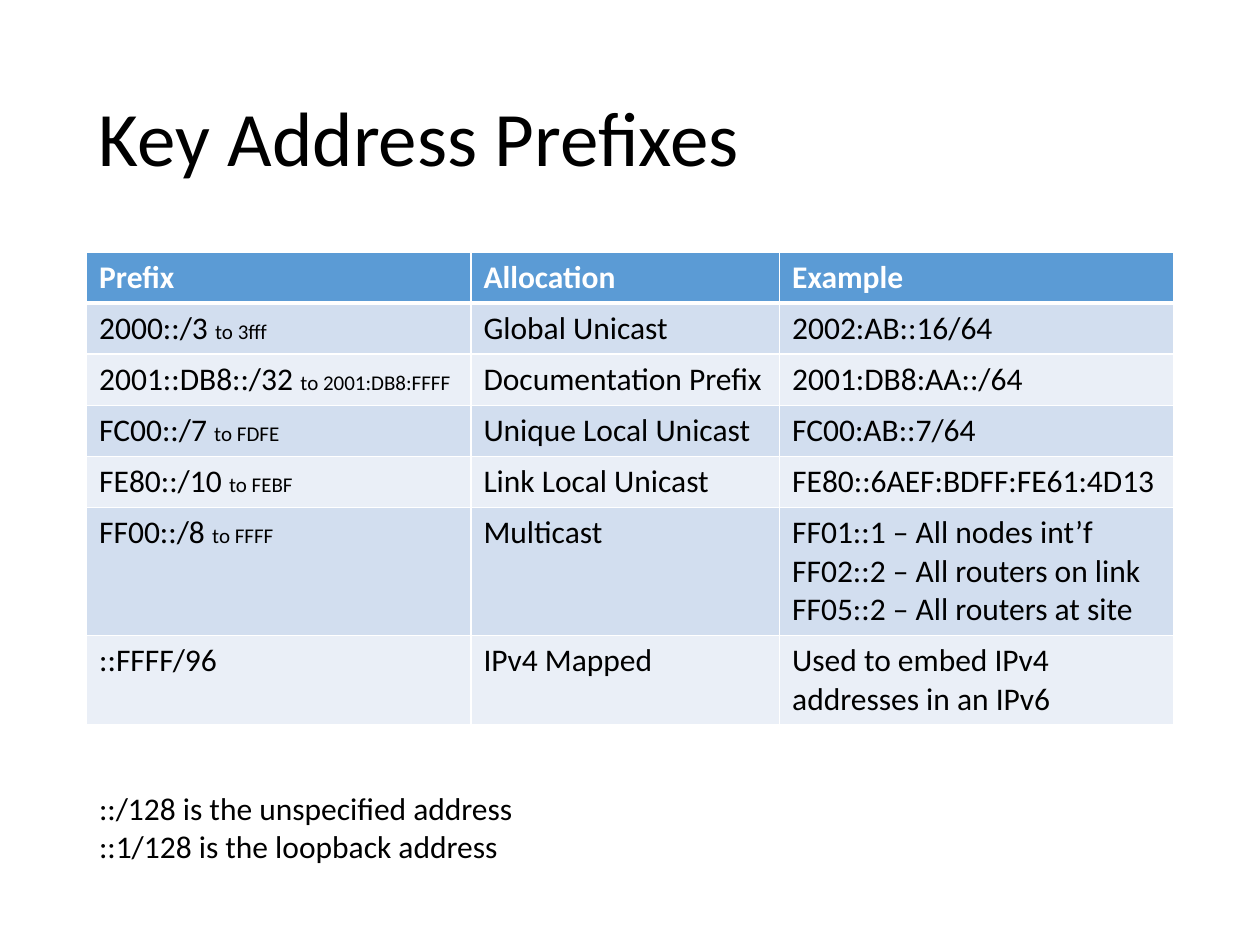
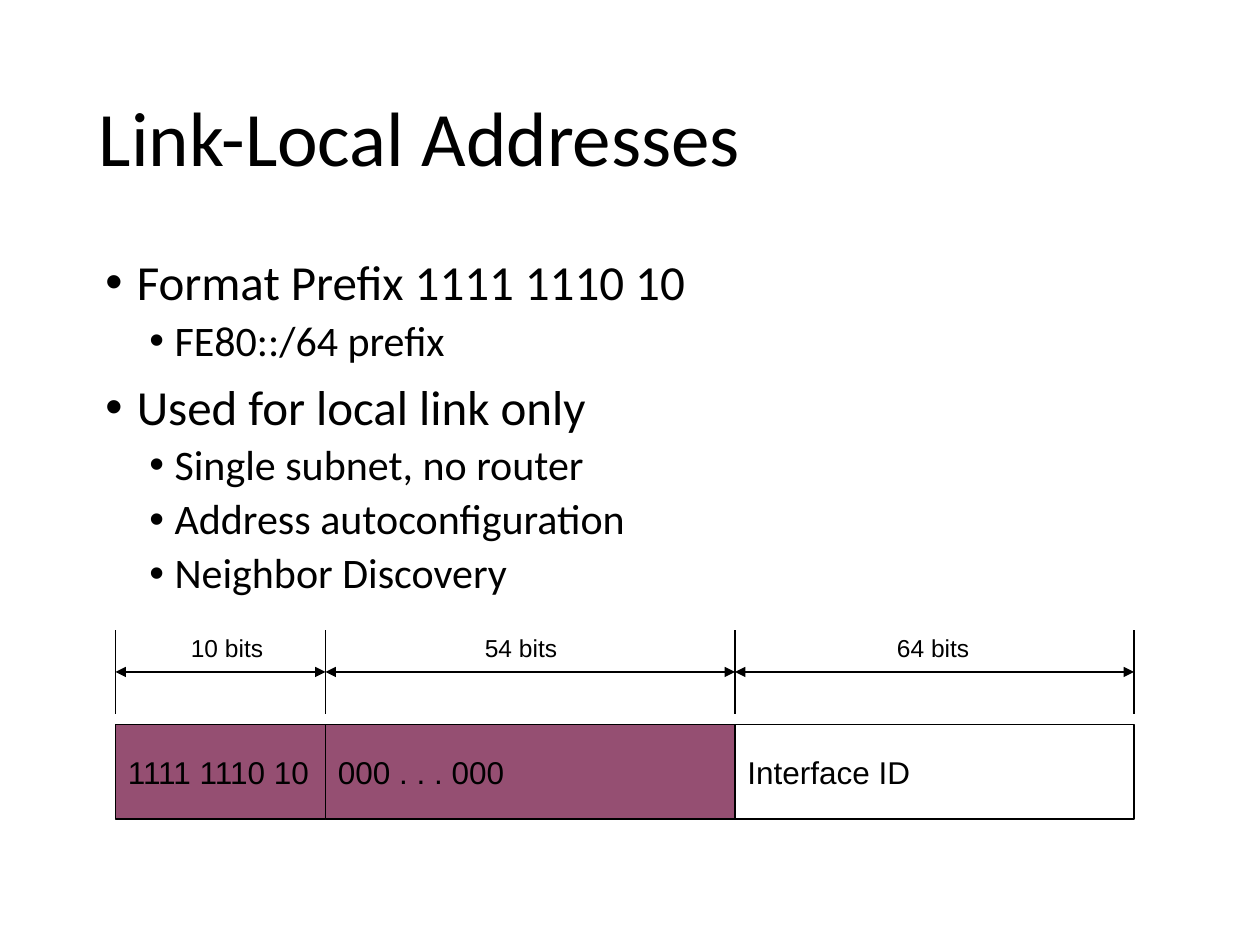
from dataclasses import dataclass
from itertools import accumulate

from lxml.etree import SubElement
from pptx import Presentation
from pptx.dml.color import RGBColor
from pptx.enum.shapes import MSO_CONNECTOR, MSO_SHAPE
from pptx.enum.text import MSO_ANCHOR, PP_ALIGN
from pptx.oxml.ns import qn
from pptx.slide import Slide
from pptx.table import _Cell
from pptx.text.text import TextFrame, _Paragraph
from pptx.util import Pt

COLORS = {
    "text": "000000",
    "paper": "FFFFFF",
    "header": "5B9BD5",
    "odd_row": "D2DEEF",
    "even_row": "EAEFF7",
    "prefix_bits": "954F72",
}
BODY_FONT = "Calibri"
DIAGRAM_FONT = "Arial"
MARGIN = 49.5
CONTENT_TOP = 144
CONTENT_WIDTH = 621
COLUMN_WIDTHS = (219.6, 176.4, 225)
ROW_HEIGHT = 29.2
LINE_HEIGHT = 21.95


@dataclass(frozen=True)
class PrefixRow:
    prefix: str
    range_end: str
    allocation: str
    examples: tuple[str, ...]
    line_count: int = 1


@dataclass(frozen=True)
class Bullet:
    text: str
    level: int = 0


@dataclass(frozen=True)
class BulletStyle:
    size: float
    indent: float
    hanging: float
    space_before: float


@dataclass(frozen=True)
class AddressField:
    content: str
    bits: str
    width: float
    label_right: float
    color: str


PREFIX_ROWS = (
    PrefixRow("2000::/3 ", "to 3fff", "Global Unicast", ("2002:AB::16/64",)),
    PrefixRow("2001::DB8::/32 ", "to 2001:DB8:FFFF", "Documentation Prefix", ("2001:DB8:AA::/64",)),
    PrefixRow("FC00::/7 ", "to FDFE", "Unique Local Unicast", ("FC00:AB::7/64",)),
    PrefixRow("FE80::/10 ", "to FEBF", "Link Local Unicast", ("FE80::6AEF:BDFF:FE61:4D13",)),
    PrefixRow(
        "FF00::/8 ", "to FFFF", "Multicast",
        ("FF01::1 – All nodes int’f", "FF02::2 – All routers on link", "FF05::2 – All routers at site"),
        line_count=3,
    ),
    PrefixRow("::FFFF/96", "", "IPv4 Mapped", ("Used to embed IPv4 addresses in an IPv6",), line_count=2),
)
BULLETS = (
    Bullet("Format Prefix 1111 1110 10"),
    Bullet("FE80::/64 prefix", 1),
    Bullet("Used for local link only"),
    Bullet("Single subnet, no router", 1),
    Bullet("Address autoconfiguration", 1),
    Bullet("Neighbor Discovery", 1),
)
BULLET_STYLES = (BulletStyle(28, 21.6, 18, 10), BulletStyle(24, 43.2, 14.4, 5))
FIELDS = (
    AddressField("1111 1110 10", "10 bits", 120, 157.5, "prefix_bits"),
    AddressField("000 . . . 000", "54 bits", 234, 325.5, "prefix_bits"),
    AddressField("Interface ID", "64 bits", 228, 561, "paper"),
)
FIELDS_LEFT = 66
TICK_TOP, TICK_BOTTOM, ARROW_Y = 360, 408, 384
FIELD_TOP, FIELD_HEIGHT = 414, 54
LABEL_TOP, LABEL_WIDTH, LABEL_HEIGHT = 358, 66, 24


def rgb(name: str) -> RGBColor:
    return RGBColor.from_string(COLORS[name])


def write(
    paragraph: _Paragraph, text: str, *, size: float = 18, font: str = BODY_FONT,
    color: str = "text", bold: bool = False, align: PP_ALIGN = PP_ALIGN.LEFT,
    line_spacing: float = 1.0, space_before: float = 0,
) -> None:
    paragraph.alignment = align
    paragraph.line_spacing = line_spacing
    paragraph.space_before = Pt(space_before)
    run = paragraph.add_run()
    run.text = text
    run.font.size = Pt(size)
    run.font.name = font
    run.font.bold = bold
    run.font.color.rgb = rgb(color)


def next_paragraph(frame: TextFrame, index: int) -> _Paragraph:
    return frame.add_paragraph() if index else frame.paragraphs[0]


def add_text_frame(slide: Slide, left: float, top: float, width: float, height: float) -> TextFrame:
    frame = slide.shapes.add_textbox(Pt(left), Pt(top), Pt(width), Pt(height)).text_frame
    frame.word_wrap = True
    return frame


def add_titled_slide(deck: Presentation, title: str) -> Slide:
    slide = deck.slides.add_slide(deck.slide_layouts[6])
    slide.background.fill.solid()
    slide.background.fill.fore_color.rgb = rgb("paper")
    frame = add_text_frame(slide, MARGIN, 28.75, CONTENT_WIDTH, 104.4)
    frame.vertical_anchor = MSO_ANCHOR.MIDDLE
    write(frame.paragraphs[0], title, size=44, line_spacing=0.9)
    return slide


def style_cell(cell: _Cell, fill: str, top: float = 1, bottom: float = 1) -> None:
    properties = cell._tc.get_or_add_tcPr()
    for side, width in (("lnL", 1), ("lnR", 1), ("lnT", top), ("lnB", bottom)):
        border = SubElement(properties, qn(f"a:{side}"), w=str(Pt(width)))
        paint = SubElement(border, qn("a:solidFill"))
        SubElement(paint, qn("a:srgbClr"), val=COLORS["paper"])
    cell.fill.solid()
    cell.fill.fore_color.rgb = rgb(fill)


def add_prefix_table(slide: Slide) -> None:
    heights = [ROW_HEIGHT] + [ROW_HEIGHT + (row.line_count - 1) * LINE_HEIGHT for row in PREFIX_ROWS]
    table = slide.shapes.add_table(
        len(heights), len(COLUMN_WIDTHS), Pt(MARGIN), Pt(CONTENT_TOP), Pt(CONTENT_WIDTH), Pt(sum(heights))
    ).table
    for column, width in zip(table.columns, COLUMN_WIDTHS):
        column.width = Pt(width)
    for table_row, height in zip(table.rows, heights):
        table_row.height = Pt(height)
    for column, heading in enumerate(("Prefix", "Allocation", "Example")):
        cell = table.cell(0, column)
        style_cell(cell, "header", bottom=3)
        write(cell.text_frame.paragraphs[0], heading, color="paper", bold=True)
    for index, row in enumerate(PREFIX_ROWS, start=1):
        contents = ((row.prefix,), (row.allocation,), row.examples)
        for column, lines in enumerate(contents):
            cell = table.cell(index, column)
            style_cell(cell, "odd_row" if index % 2 else "even_row", top=3 if index == 1 else 1)
            for line_index, line in enumerate(lines):
                write(next_paragraph(cell.text_frame, line_index), line)
        if row.range_end:
            write(table.cell(index, 0).text_frame.paragraphs[0], row.range_end, size=12)


def add_bullets(slide: Slide) -> None:
    frame = add_text_frame(slide, MARGIN, CONTENT_TOP, CONTENT_WIDTH, 342.7)
    for index, bullet in enumerate(BULLETS):
        style = BULLET_STYLES[bullet.level]
        paragraph = next_paragraph(frame, index)
        paragraph.level = bullet.level
        write(paragraph, bullet.text, size=style.size, line_spacing=0.9, space_before=style.space_before)
        properties = paragraph._p.get_or_add_pPr()
        properties.set("marL", str(Pt(style.indent)))
        properties.set("indent", str(Pt(-style.hanging)))
        SubElement(properties, qn("a:buFont"), typeface=DIAGRAM_FONT)
        SubElement(properties, qn("a:buChar"), char="•")


def add_line(slide: Slide, x1: float, y1: float, x2: float, y2: float, arrows: bool = False) -> None:
    connector = slide.shapes.add_connector(MSO_CONNECTOR.STRAIGHT, Pt(x1), Pt(y1), Pt(x2), Pt(y2))
    connector.line.color.rgb = rgb("text")
    connector.line.width = Pt(1)
    if arrows:
        outline = connector.line._get_or_add_ln()
        for end in ("a:headEnd", "a:tailEnd"):
            SubElement(outline, qn(end), type="triangle")
    SubElement(connector._element.spPr, qn("a:effectLst"))


def add_field(slide: Slide, field: AddressField, left: float) -> None:
    box = slide.shapes.add_shape(
        MSO_SHAPE.RECTANGLE, Pt(left), Pt(FIELD_TOP), Pt(field.width), Pt(FIELD_HEIGHT)
    )
    box.shadow.inherit = False
    box.fill.solid()
    box.fill.fore_color.rgb = rgb(field.color)
    box.line.color.rgb = rgb("text")
    box.line.width = Pt(1)
    box.text_frame.word_wrap = False
    box.text_frame.vertical_anchor = MSO_ANCHOR.MIDDLE
    write(box.text_frame.paragraphs[0], field.content, font=DIAGRAM_FONT)
    add_line(slide, left, ARROW_Y, left + field.width, ARROW_Y, arrows=True)
    label = add_text_frame(slide, field.label_right - LABEL_WIDTH, LABEL_TOP, LABEL_WIDTH, LABEL_HEIGHT)
    write(label.paragraphs[0], field.bits, size=14, font=DIAGRAM_FONT, align=PP_ALIGN.RIGHT)


def build_prefix_slide(deck: Presentation) -> None:
    slide = add_titled_slide(deck, "Key Address Prefixes")
    add_prefix_table(slide)
    notes = add_text_frame(slide, MARGIN, 447.3, 378, 51)
    special_addresses = ("::/128 is the unspecified address", "::1/128 is the loopback address")
    for index, line in enumerate(special_addresses):
        write(next_paragraph(notes, index), line)


def build_link_local_slide(deck: Presentation) -> None:
    slide = add_titled_slide(deck, "Link-Local Addresses")
    add_bullets(slide)
    boundaries = list(accumulate((field.width for field in FIELDS), initial=FIELDS_LEFT))
    for field, left in zip(FIELDS, boundaries):
        add_field(slide, field, left)
    for x in boundaries:
        add_line(slide, x, TICK_TOP, x, TICK_BOTTOM)


def main() -> None:
    deck = Presentation()
    deck.slide_width, deck.slide_height = Pt(720), Pt(540)
    build_prefix_slide(deck)
    build_link_local_slide(deck)
    deck.save("out.pptx")


if __name__ == "__main__":
    main()
